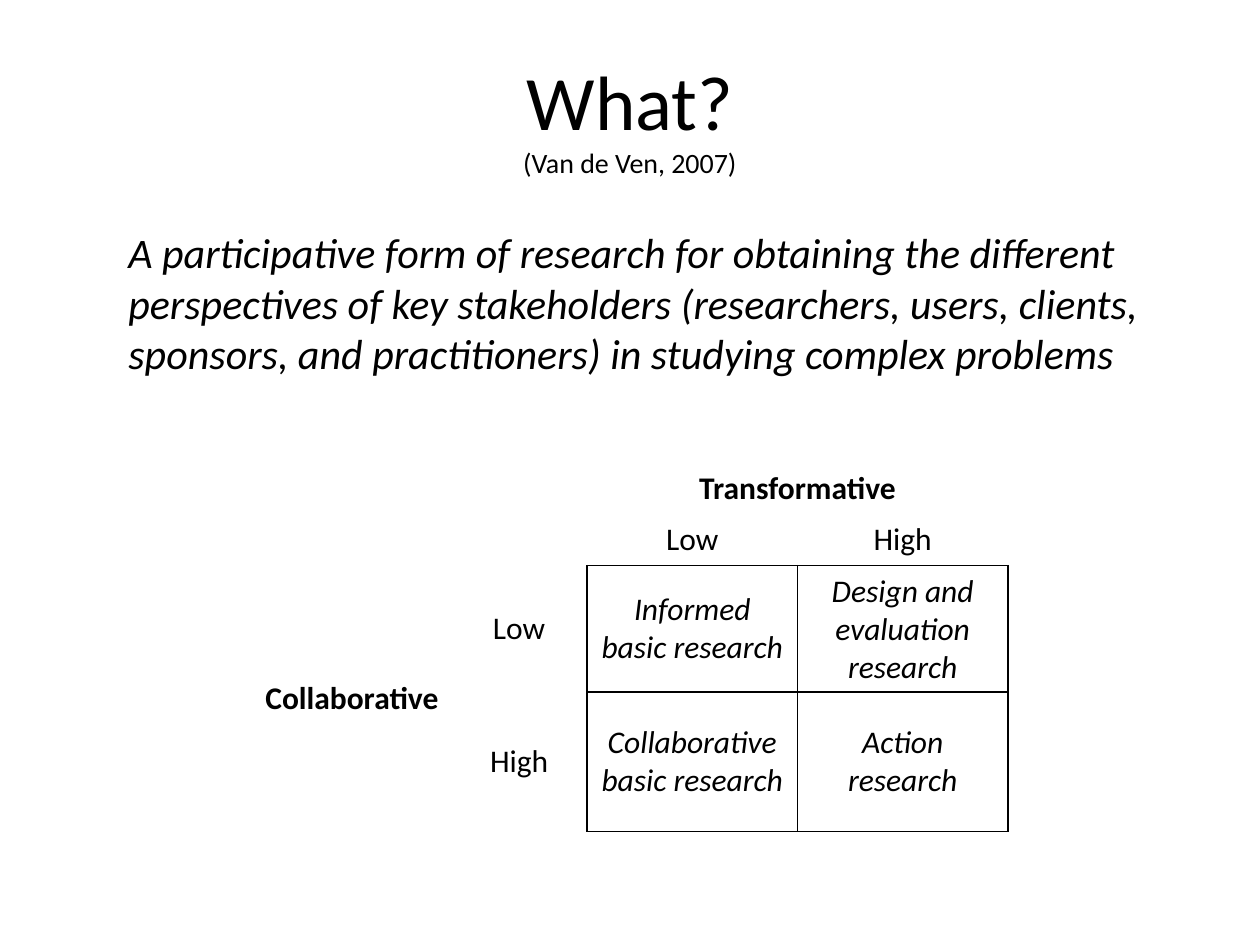
from lxml import etree
from pptx import Presentation
from pptx import util as u
from pptx.dml.color import RGBColor
from pptx.enum import text
from pptx.oxml.ns import qn

COLORS = {"ink": "000000", "paper": "FFFFFF"}
LEFT, CENTER, RIGHT = text.PP_ALIGN.LEFT, text.PP_ALIGN.CENTER, text.PP_ALIGN.RIGHT
TOP, MIDDLE = text.MSO_ANCHOR.TOP, text.MSO_ANCHOR.MIDDLE


def write(p, words, size=18, bold=False, italic=False, align=CENTER):
    """Append a formatted run to a paragraph."""
    p.alignment = align
    r = p.add_run()
    r.text = words
    r.font.name = "Calibri"
    r.font.size = u.Pt(size)
    r.font.bold = bold
    r.font.italic = italic
    r.font.color.rgb = RGBColor.from_string(COLORS["ink"])


class Deck:
    """Hold the presentation style and the current slide."""

    def __init__(self, width, height):
        """Start a presentation with one blank slide."""
        self.prs = Presentation()
        self.prs.slide_width = u.Inches(width)
        self.prs.slide_height = u.Inches(height)
        self.s = self.prs.slides.add_slide(self.prs.slide_layouts[6])
        fill = self.s.background.fill
        fill.solid()
        fill.fore_color.rgb = RGBColor.from_string(COLORS["paper"])

    def text_box(self, left, top, width, height, anchor=TOP):
        """Add a wrapping text box and return its first paragraph."""
        sp = self.s.shapes.add_textbox(*map(u.Inches, (left, top, width, height)))
        tf = sp.text_frame
        tf.word_wrap = True
        tf.vertical_anchor = anchor
        return tf.paragraphs[0]

    def table(self, left, top, cols, rows):
        """Add an unbanded table with the given column and row sizes."""
        box = map(u.Inches, (left, top, sum(cols), sum(rows)))
        tbl = self.s.shapes.add_table(len(rows), len(cols), *box).table
        tbl.first_row = tbl.horz_banding = False
        for col, width in zip(tbl.columns, cols):
            col.width = u.Inches(width)
        for row, height in zip(tbl.rows, rows):
            row.height = u.Inches(height)
        return tbl

    def borders(self, cell, **edges):
        """Draw the L, R, T and B edges of a cell from (color, points) pairs."""
        tc_pr = cell._tc.get_or_add_tcPr()
        for i, side in enumerate("LRTB"):
            color, width = edges.get(side, ("paper", 1))
            ln = etree.Element(qn(f"a:ln{side}"), w=str(u.Pt(width)))
            fill = etree.SubElement(ln, qn("a:solidFill"))
            etree.SubElement(fill, qn("a:srgbClr"), val=COLORS[color])
            tc_pr.insert(i, ln)


def build_matrix(deck):
    """Build the two-by-two matrix with its axis labels."""
    grid = [
        ["", "", "Transformative", ""],
        ["", "", "Low", "High"],
        ["Collaborative", "Low", "Informed basic research", "Design and evaluation research"],
        ["", "High", "Collaborative basic research", "Action research"],
    ]
    tbl = deck.table(1.33, 3.67, [2.25, 1.08, 1.67, 1.67], [0.41, 0.41, 0.41, 1.11])
    tbl.cell(0, 2).merge(tbl.cell(0, 3))
    tbl.cell(2, 0).merge(tbl.cell(3, 0))
    line = ("ink", 1)
    for i, row in enumerate(grid):
        for j, words in enumerate(row):
            cell = tbl.cell(i, j)
            inner = i >= 2 and j >= 2
            if inner:
                cell.fill.solid()
                cell.fill.fore_color.rgb = RGBColor.from_string(COLORS["paper"])
                edges = dict.fromkeys("LRTB", line)
            else:
                cell.fill.background()
                edges = {"B": ("paper", 3)} if i == 0 else {}
                if i == 1 and j >= 2:
                    edges["B"] = line
                if i >= 2 and j == 1:
                    edges["R"] = line
            deck.borders(cell, **edges)
            if words:
                cell.vertical_anchor = TOP if i == 1 else MIDDLE
                write(cell.text_frame.paragraphs[0], words, italic=inner,
                      bold=i == 0 or j == 0, align=RIGHT if j == 0 else CENTER)


def main():
    """Build and save the slide."""
    deck = Deck(10, 7.5)
    p = deck.text_box(0.5, 0.3, 9, 1.25, anchor=MIDDLE)
    write(p, "What?", size=44)
    p.add_line_break()
    write(p, "(Van de Ven, 2007)", size=16)
    p = deck.text_box(0.92, 1.75, 8.25, 4.95)
    p.space_before = u.Pt(4.8)
    write(p, "A participative form of research for obtaining the different perspectives "
          "of key stakeholders (researchers, users, clients, sponsors, and practitioners) "
          "in studying complex problems", size=24, italic=True, align=LEFT)
    build_matrix(deck)
    deck.prs.save("out.pptx")


if __name__ == "__main__":
    main()
